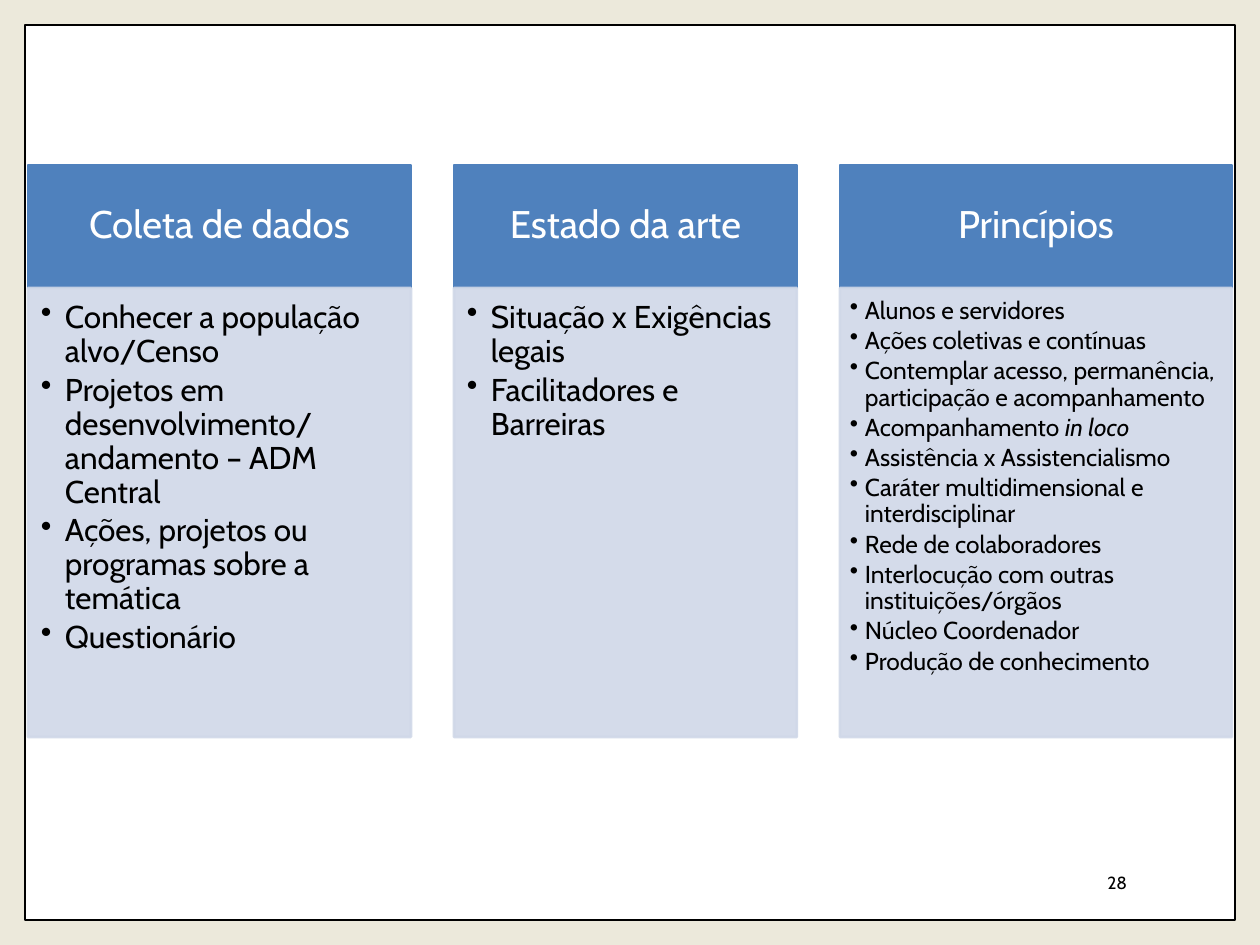
import pptx
import pptx.util
from pptx.dml.color import RGBColor
from pptx.enum.shapes import MSO_SHAPE
from pptx.enum.text import MSO_ANCHOR, PP_ALIGN
from pptx.oxml.ns import qn
from lxml import etree

PX = 914400 / 126
FONT = "Cabin"
BEIGE = RGBColor(0xEC, 0xE9, 0xDB)
WHITE = RGBColor(0xFF, 0xFF, 0xFF)
BLACK = RGBColor(0x00, 0x00, 0x00)
BLUE = RGBColor(0x4F, 0x81, 0xBD)
PALE_BLUE = RGBColor(0xD0, 0xD8, 0xE8)

HEADER_HEIGHT = 123
# Insets are left, top, right, bottom in px
HEADER_INSETS = (21, 13, 21, 13)
LARGE_LIST = {"size": 18, "indent": 24, "insets": (13, 13, 18, 20)}
SMALL_LIST = {"size": 14, "indent": 15, "insets": (10, 10, 14, 15)}

# Each column: heading, left, width, list style, items (an item is a list of text and italic)
COLUMNS = [
    ("Coleta de dados", 28, 383, LARGE_LIST, [
        "Conhecer a população alvo/Censo",
        "Projetos em desenvolvimento/ andamento – ADM Central",
        "Ações, projetos ou programas sobre a temática",
        "Questionário",
    ]),
    ("Estado da arte", 454, 343, LARGE_LIST, [
        "Situação x Exigências legais",
        "Facilitadores e Barreiras",
    ]),
    ("Princípios", 840, 392, SMALL_LIST, [
        "Alunos e servidores",
        "Ações coletivas e contínuas",
        "Contemplar acesso, permanência, participação e acompanhamento",
        ("Acompanhamento ", "in loco"),
        "Assistência x Assistencialismo",
        "Caráter multidimensional e interdisciplinar",
        "Rede de colaboradores",
        "Interlocução com outras instituições/órgãos",
        "Núcleo Coordenador",
        "Produção de conhecimento",
    ]),
]


def px(length):
    return pptx.util.Emu(round(length * PX))


def set_attributes(target, values):
    for name, value in values.items():
        setattr(target, name, value)


def add_rectangle(slide, box, fill, line, line_width):
    shape = slide.shapes.add_shape(MSO_SHAPE.RECTANGLE, *map(px, box))
    shape.shadow.inherit = False
    shape.fill.solid()
    shape.fill.fore_color.rgb = fill
    shape.line.color.rgb = line
    shape.line.width = pptx.util.Pt(line_width)
    return shape


def set_opacity(shape, percent):
    for color in shape._element.spPr.iter(qn("a:srgbClr")):
        etree.SubElement(color, qn("a:alpha"), val=str(percent * 1000))


def set_frame(frame, insets, anchor):
    sides = ("margin_left", "margin_top", "margin_right", "margin_bottom")
    set_attributes(frame, dict(zip(sides, map(px, insets))))
    set_attributes(frame, {"word_wrap": True, "vertical_anchor": anchor})


def add_run(paragraph, text, size, color, italic=False):
    run = paragraph.add_run()
    run.text = text
    set_attributes(run.font, {"name": FONT, "size": pptx.util.Pt(size), "italic": italic})
    run.font.color.rgb = color


def add_bullet(paragraph, indent):
    properties = paragraph._p.get_or_add_pPr()
    properties.set("marL", str(px(indent)))
    properties.set("indent", str(-px(indent)))
    etree.SubElement(properties, qn("a:buChar"), char="•")


def add_header(slide, box, text):
    shape = add_rectangle(slide, box, BLUE, BLUE, 1.5)
    set_frame(shape.text_frame, HEADER_INSETS, MSO_ANCHOR.MIDDLE)
    paragraph = shape.text_frame.paragraphs[0]
    set_attributes(paragraph, {"alignment": PP_ALIGN.CENTER, "line_spacing": 0.9})
    add_run(paragraph, text, 22, WHITE)


def add_list(slide, box, items, style):
    shape = add_rectangle(slide, box, PALE_BLUE, PALE_BLUE, 1.5)
    set_opacity(shape, 90)
    frame = shape.text_frame
    set_frame(frame, style["insets"], MSO_ANCHOR.TOP)
    for index, item in enumerate(items):
        paragraph = frame.add_paragraph() if index else frame.paragraphs[0]
        set_attributes(paragraph, {
            "alignment": PP_ALIGN.LEFT,
            "line_spacing": 0.9,
            "space_after": pptx.util.Pt(style["size"] * 0.15),
        })
        add_bullet(paragraph, style["indent"])
        # The second part of a split item is italic
        parts = (item,) if isinstance(item, str) else item
        for position, text in enumerate(parts):
            add_run(paragraph, text, style["size"], BLACK, italic=position == 1)


def add_column(slide, box, heading, items, style):
    left, top, width, height = box
    add_header(slide, (left, top, width, HEADER_HEIGHT), heading)
    list_box = (left, top + HEADER_HEIGHT, width, height - HEADER_HEIGHT)
    add_list(slide, list_box, items, style)


def add_page_number(slide, box, number):
    frame = slide.shapes.add_textbox(*map(px, box)).text_frame
    set_frame(frame, (13, 6, 13, 6), MSO_ANCHOR.MIDDLE)
    paragraph = frame.paragraphs[0]
    paragraph.alignment = PP_ALIGN.RIGHT
    add_run(paragraph, number, 10, BLACK)


def main():
    presentation = pptx.Presentation()
    presentation.slide_width = px(1260)
    presentation.slide_height = px(945)
    slide = presentation.slides.add_slide(presentation.slide_layouts[6])

    # Background and framed page
    slide.background.fill.solid()
    slide.background.fill.fore_color.rgb = BEIGE
    add_rectangle(slide, (25, 25, 1210, 895), WHITE, BLACK, 1)
    add_page_number(slide, (964, 858, 176, 50), "28")

    # Three columns
    for heading, left, width, style, items in COLUMNS:
        add_column(slide, (left, 165, width, 572), heading, items, style)

    presentation.save("out.pptx")


if __name__ == "__main__":
    main()
